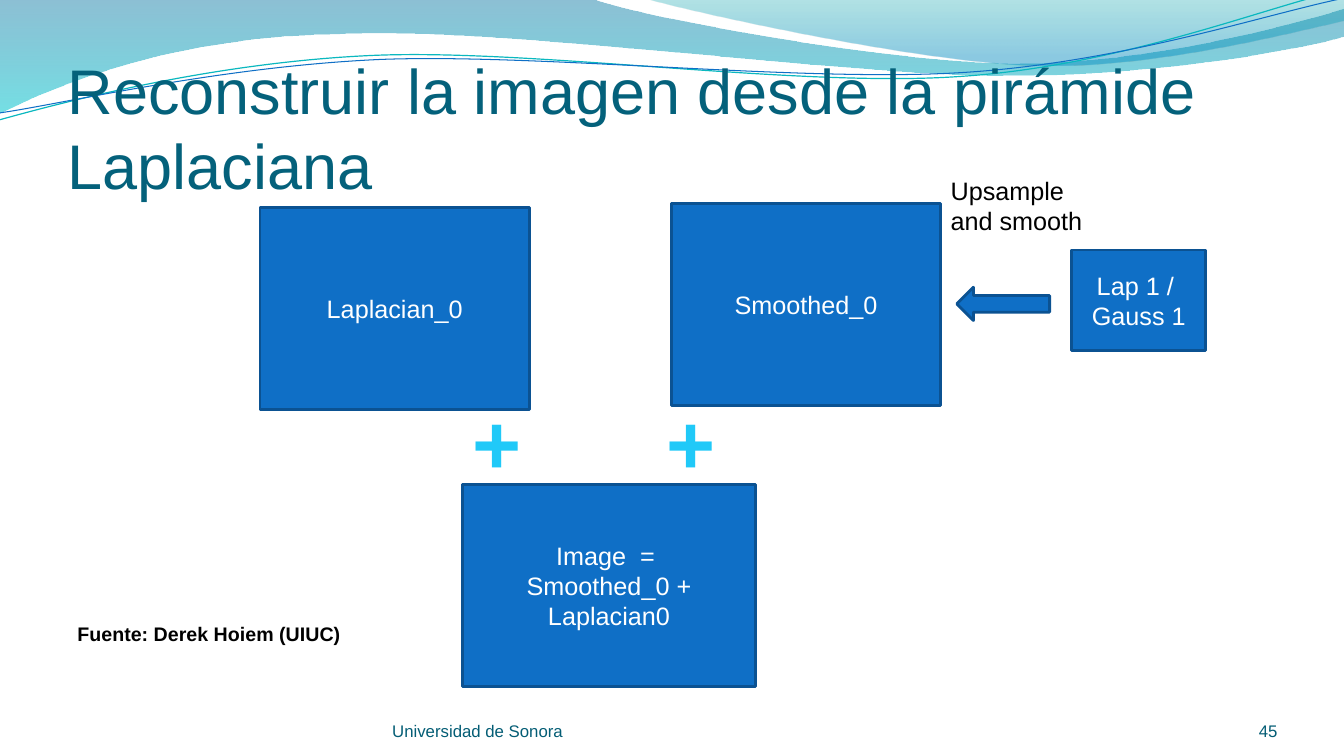
"""Build the slide on reconstructing an image from its Laplacian pyramid."""
from lxml import etree
from pptx import Presentation
from pptx import util as u
from pptx.dml.color import RGBColor
from pptx.enum import shapes, text
from pptx.oxml.ns import qn

FONT, BLUE, EDGE = "Arial", "0F6FC6", "0B5292"
LEFT, CENTER, RIGHT = text.PP_ALIGN.LEFT, text.PP_ALIGN.CENTER, text.PP_ALIGN.RIGHT
TOP, MIDDLE, BOTTOM = text.MSO_ANCHOR.TOP, text.MSO_ANCHOR.MIDDLE, text.MSO_ANCHOR.BOTTOM
INSET, FLUSH = (0.1, 0.05, 0.1, 0.05), (0, 0, 0, 0)

BANDS = [
    ([(0, 0), (5.87, -0.01),
      (6.34, 0.17, 8.85, 0.63, 10.11, 0.63), (11.38, 0.63, 12.78, 0.26, 13.33, 0.09),
      (13.35, 0.36),
      (13.11, 0.44, 11.6, 0.76, 9.94, 0.75), (8.29, 0.75, 5.09, 0.28, 3.43, 0.34),
      (1.72, 0.36, 0.61, 0.83, -0.01, 1.13)],
     [(0, "0074A1", 45), (1, "00C6CF", 55)]),
    ([(6.39, -0.01),
      (6.79, 0.11, 9.09, 0.62, 10.25, 0.65), (11.41, 0.69, 12.82, 0.32, 13.33, 0.21),
      (13.33, 0)],
     [(0, "00A1A9", 30), (0.8, "008BBF", 45)]),
]
WAVES = [
    ([(-0.01, 1.19), (0.64, 1.01, 2.11, 0.62, 3.69, 0.55),
      (5.27, 0.48, 7.9, 0.87, 9.5, 0.76), (11.1, 0.66, 12.52, 0.08, 13.31, -0.1)],
     "0AB8BF", 0.85),
    ([(0, 1.12), (0.63, 1.03, 2.18, 0.66, 3.78, 0.59),
      (5.37, 0.53, 7.96, 0.82, 9.55, 0.72), (11.15, 0.62, 12.55, 0.14, 13.34, -0.02)],
     BLUE, 0.75),
]
LABELS = [
    ("Reconstruir la imagen desde la pirámide Laplaciana", (0.67, 0.76, 12, 1.25),
     45, "04617B", False, LEFT, BOTTOM, (0, 0.05, 0, 0), True),
    ("Fuente: Derek Hoiem (UIUC)", (0.67, 6.12, 3.5, 0.33),
     14, "000000", True, LEFT, TOP, INSET, True),
    ("Universidad de Sonora", (3.89, 6.95, 4.89, 0.4),
     12, "045D75", False, LEFT, BOTTOM, FLUSH, True),
    ("45", (11.56, 6.95, 1.11, 0.4), 12, "045D75", False, RIGHT, BOTTOM, FLUSH, True),
    ("Upsample and smooth", (9.33, 1.69, 1.64, 0.71),
     18, "000000", False, LEFT, TOP, INSET, True),
] + [("+", (left, 3.82, 0.69, 1.11), 60, "20C9F8", True, LEFT, TOP, INSET, False)
     for left in (6.51, 4.59)]
BLOCKS = [
    (["Image  = ", "Smoothed_0 + Laplacian0"], (4.59, 4.81, 2.9, 2)),
    (["Lap 1 / ", "Gauss 1"], (10.63, 2.48, 1.33, 1)),
    (["Smoothed_0"], (6.66, 2.02, 2.67, 2)),
    (["Laplacian_0"], (2.58, 2.06, 2.67, 2)),
]
ARROW = (9.49, 2.85, 0.92, 0.33)


def color(value):
    return RGBColor.from_string(value)


def inches(values):
    return [u.Inches(value) for value in values]


def add_outline(page, steps, close):
    points = [inches(step[at:at + 2]) for step in steps for at in range(0, len(step), 2)]
    builder = page.shapes.build_freeform(*points[0])
    builder.add_line_segments(points[1:], close=close)
    outline = builder.convert_to_shape()
    outline.shadow.inherit = False
    segments = iter(list(outline._element.spPr.iter(qn("a:lnTo"))))
    for step in steps[1:]:
        first = next(segments)
        if len(step) == 6:
            first.tag = qn("a:cubicBezTo")
            for segment in (next(segments), next(segments)):
                first.append(segment[0])
                segment.getparent().remove(segment)
    return outline


def add_band(page, steps, stops):
    band = add_outline(page, steps, True)
    band.line.fill.background()
    band.fill.gradient()
    band.fill.gradient_angle = 270
    for stop, (position, tint, _) in zip(band.fill.gradient_stops, stops):
        stop.position = position
        stop.color.rgb = color(tint)
    tints = band._element.spPr.iter(qn("a:srgbClr"))
    for tint, (_, _, opacity) in zip(list(tints), stops):
        etree.SubElement(tint, qn("a:alpha")).set("val", str(opacity * 1000))


def add_wave(page, steps, tint, width):
    wave = add_outline(page, steps, False)
    wave.fill.background()
    wave.line.color.rgb = color(tint)
    wave.line.width = u.Pt(width)


def write(box, lines, size, tint, bold, align, anchor, inset, wrap):
    frame = box.text_frame
    frame.word_wrap = wrap
    frame.vertical_anchor = anchor
    (frame.margin_left, frame.margin_top,
     frame.margin_right, frame.margin_bottom) = inches(inset)
    for index, line in enumerate(lines):
        para = frame.add_paragraph() if index else frame.paragraphs[0]
        para.alignment = align
        span = para.add_run()
        span.text = line
        span.font.name, span.font.size, span.font.bold = FONT, u.Pt(size), bold
        span.font.color.rgb = color(tint)


def add_block(page, kind, place):
    block = page.shapes.add_shape(kind, *inches(place))
    block.shadow.inherit = False
    block.fill.solid()
    block.fill.fore_color.rgb = color(BLUE)
    block.line.color.rgb = color(EDGE)
    block.line.width = u.Pt(2)
    return block


def main():
    deck = Presentation()
    deck.slide_width, deck.slide_height = inches((13.33, 7.5))
    page = deck.slides.add_slide(deck.slide_layouts[6])
    for band in BANDS:
        add_band(page, *band)
    for wave in WAVES:
        add_wave(page, *wave)
    for lines, place in BLOCKS:
        block = add_block(page, shapes.MSO_SHAPE.RECTANGLE, place)
        write(block, lines, 18, "FFFFFF", False, CENTER, MIDDLE, INSET, True)
    add_block(page, shapes.MSO_SHAPE.LEFT_ARROW, ARROW)
    for wording, place, *style in LABELS:
        write(page.shapes.add_textbox(*inches(place)), [wording], *style)
    deck.save("out.pptx")


if __name__ == "__main__":
    main()
